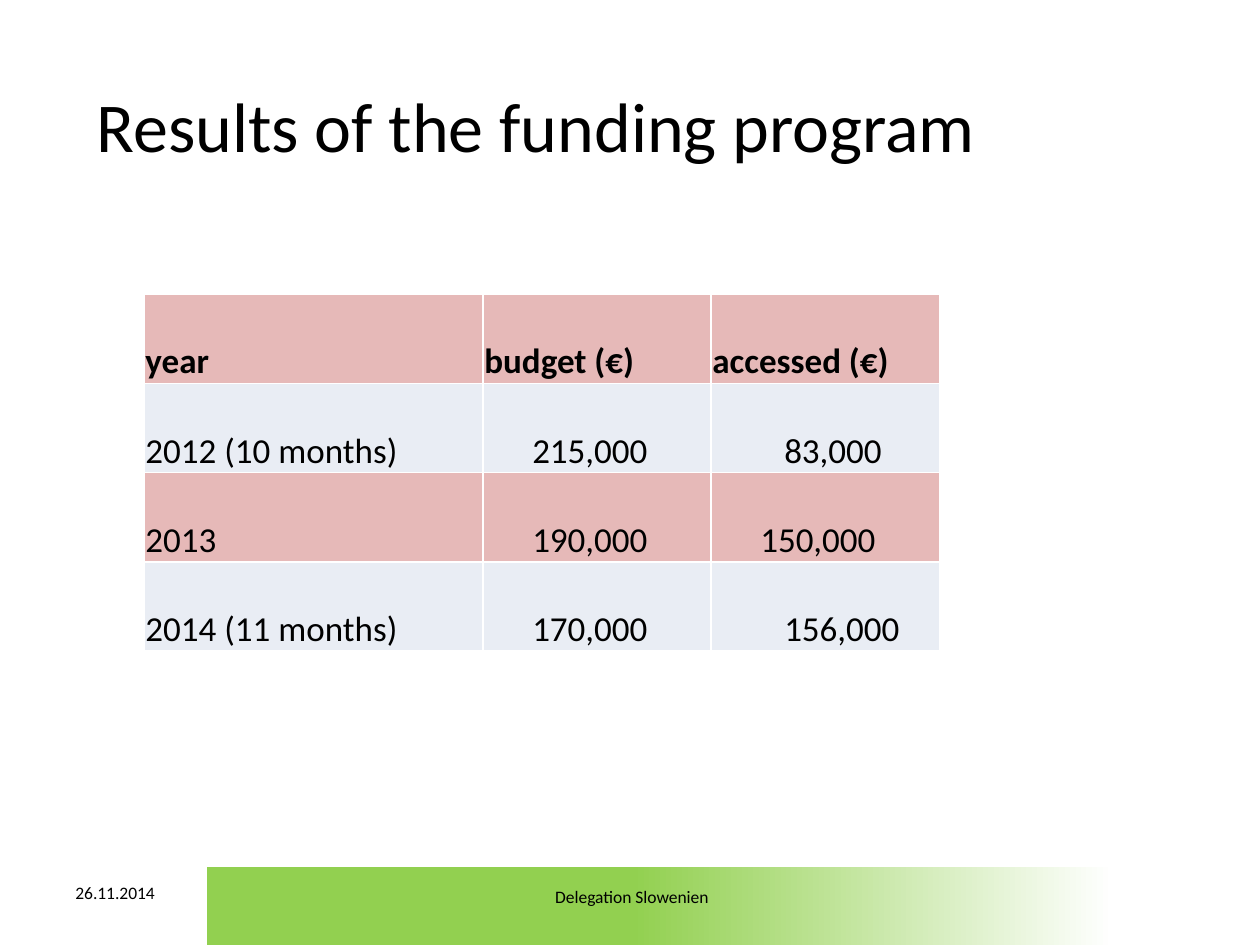
from lxml.etree import SubElement as Sub
from pptx import Presentation as Deck
from pptx.dml.color import RGBColor as Rgb
from pptx.enum.shapes import MSO_SHAPE as Shape
from pptx.enum.text import MSO_ANCHOR as Anchor, MSO_AUTO_SIZE as Fit, PP_ALIGN as Align
from pptx.oxml.ns import qn
from pptx.util import Inches, Pt

BLACK = Rgb(0x00, 0x00, 0x00)
WHITE = Rgb(0xFF, 0xFF, 0xFF)
GREEN = Rgb(0x92, 0xD0, 0x50)
ROSE = Rgb(0xE6, 0xB9, 0xB8)
PALE = Rgb(0xE9, 0xED, 0xF4)
FONT = "Calibri"
COLS, ROWS = 100, 75
WIDTHS = (26.9, 18.1, 18.1)
HIGH = 7.08
NEAR, FAR = 3.8, 5.7
DATA = (
    (("year", 0), ("budget (€)", 0), ("accessed (€)", 0)),
    (("2012 (10 months)", 0), ("215,000", NEAR), ("83,000", FAR)),
    (("2013", 0), ("190,000", NEAR), ("150,000", NEAR)),
    (("2014 (11 months)", 0), ("170,000", NEAR), ("156,000", FAR)),
)


def unit(count):
    """Turn a count of grid steps into a length."""
    return Inches(count * 10 / COLS)


def place(*steps):
    """Turn left, top, width and height in grid steps into lengths."""
    return [unit(step) for step in steps]


def style(para, size, bold=False):
    """Format the runs of a paragraph."""
    for run in para.runs:
        font = run.font
        font.name, font.size, font.bold = FONT, Pt(size), bold
        font.color.rgb = BLACK


def label(slide, text, box, size, align=Align.LEFT, wrap=True):
    """Add a line of text and return its frame."""
    frame = slide.shapes.add_textbox(*place(*box)).text_frame
    frame.text = text
    frame.word_wrap = wrap
    para = frame.paragraphs[0]
    para.alignment = align
    style(para, size)
    return frame


def band(slide):
    """Add the footer band that fades to white on the right."""
    bar = slide.shapes.add_shape(Shape.RECTANGLE, *place(16.4, 68.8, 72, 6.8))
    bar.shadow.inherit = False
    bar.line.fill.background()
    bar.fill.gradient()
    bar.fill.gradient_angle = 180
    for stop, (spot, color) in zip(bar.fill.gradient_stops, ((0, WHITE), (0.53, GREEN))):
        stop.position = spot
        stop.color.rgb = color


def edge(cell):
    """Draw white borders round a cell, ahead of its fill."""
    props = cell._tc.get_or_add_tcPr()
    for side in ("lnL", "lnR", "lnT", "lnB"):
        line = Sub(props, qn(f"a:{side}"), w=str(Pt(1)))
        Sub(Sub(line, qn("a:solidFill")), qn("a:srgbClr"), val=str(WHITE))


def fill(cell, text, indent, color, bold):
    """Set the text, colour and layout of a cell."""
    edge(cell)
    cell.fill.solid()
    cell.fill.fore_color.rgb = color
    cell.vertical_anchor = Anchor.BOTTOM
    cell.margin_left = cell.margin_right = cell.margin_top = unit(0.1)
    cell.margin_bottom = 0
    cell.text_frame.text = text
    para = cell.text_frame.paragraphs[0]
    if indent:
        para._p.get_or_add_pPr().set("marL", str(unit(indent)))
    style(para, 20, bold)


def grid(slide):
    """Add the table of budgets by year."""
    box = place(11.45, 23.35, sum(WIDTHS), HIGH * len(DATA))
    table = slide.shapes.add_table(len(DATA), len(WIDTHS), *box).table
    table.first_row = table.horz_banding = False
    for col, width in zip(table.columns, WIDTHS):
        col.width = unit(width)
    for row, line in enumerate(DATA):
        table.rows[row].height = unit(HIGH)
        for col, (text, indent) in enumerate(line):
            fill(table.cell(row, col), text, indent, PALE if row % 2 else ROSE, row == 0)


def main():
    """Build the slide and save it."""
    deck = Deck()
    deck.slide_width, deck.slide_height = unit(COLS), unit(ROWS)
    slide = deck.slides.add_slide(deck.slide_layouts[6])
    band(slide)
    label(slide, "26.11.2014", (5, 69.5, 23.3, 4), 10)
    label(slide, "Delegation Slowenien", (34.3, 69.8, 31.7, 4), 10, Align.CENTER)
    grid(slide)
    title = label(slide, "Results of the funding program", (6.7, 6.1, 72.5, 7.7), 40, wrap=False)
    title.auto_size = Fit.SHAPE_TO_FIT_TEXT
    deck.save("out.pptx")


if __name__ == "__main__":
    main()
